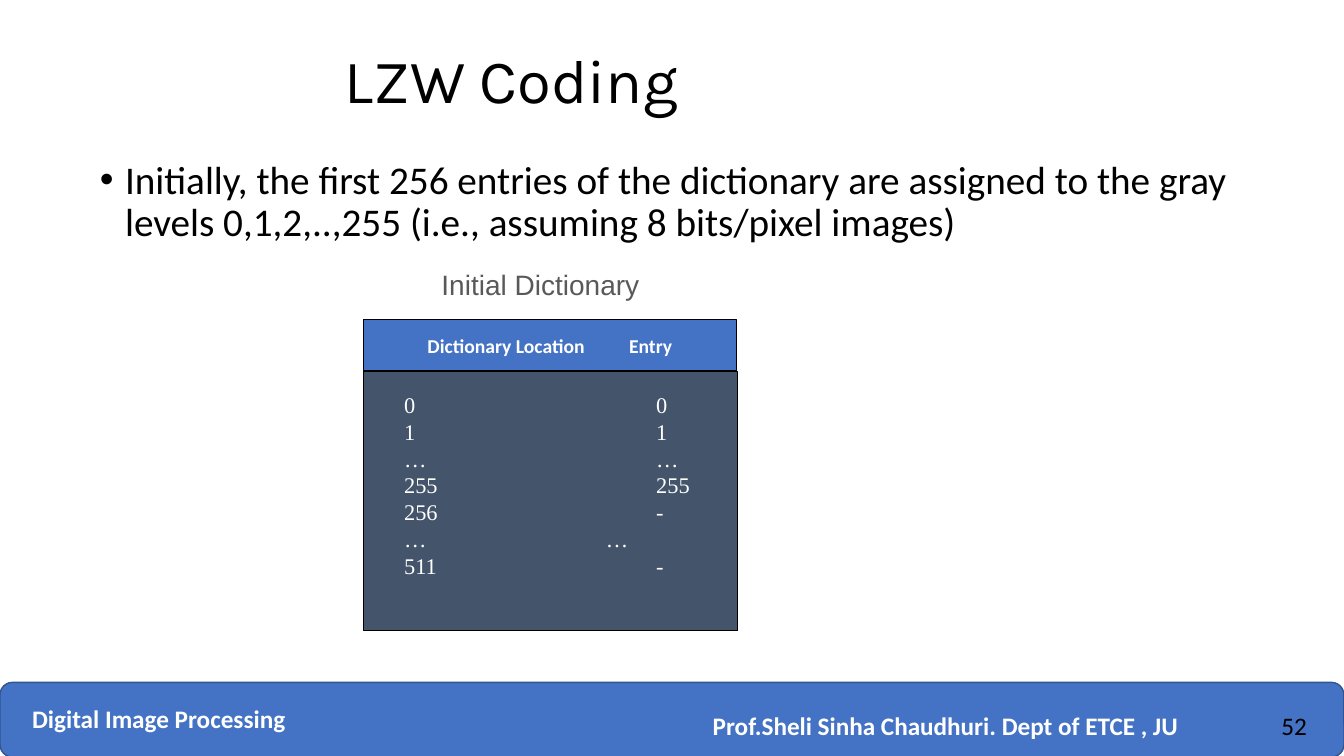
from lxml import etree
from pptx import Presentation
from pptx import util as u
from pptx.dml.color import RGBColor
from pptx.enum import shapes, text
from pptx.oxml import ns

PX = 9144  # 100 px to the inch
BLUE, SLATE, WHITE, BLACK, GRAY = "4472C4", "44546A", "FFFFFF", "000000", "595959"
ROWS = [("0", "0"), ("1", "1"), ("…", "…"), ("255", "255"),
        ("256", "-"), ("…", "…"), ("511", "-")]
ENTRY_TAB, SHORT_TAB, SHORT_ROW = 250, 200, 5


def px(length):
    return u.Emu(length * PX)


def color(target, value):
    target.rgb = RGBColor.from_string(value)


def place(shape, left, top, width, height):
    shape.left, shape.top = px(left), px(top)
    shape.width, shape.height = px(width), px(height)


def style(para, size, font, value, bold=False):
    for span in para.runs:
        span.font.size = u.Pt(size)
        span.font.name = font
        span.font.bold = bold
        color(span.font.color, value)


def add_tab(para, position):
    tabs = etree.SubElement(para._p.get_or_add_pPr(), ns.qn("a:tabLst"))
    etree.SubElement(tabs, ns.qn("a:tab"), pos=str(px(position)), algn="l")


def add_panel(page, kind, box, fill, line, weight):
    panel = page.shapes.add_shape(kind, *map(px, box))
    panel.shadow.inherit = False
    panel.fill.solid()
    color(panel.fill.fore_color, fill)
    color(panel.line.color, line)
    panel.line.width = u.Pt(weight)
    return panel


def add_label(page, box, words, size, font, value, bold=False):
    label = page.shapes.add_textbox(*map(px, box))
    label.text_frame.word_wrap = False
    label.text_frame.text = words
    style(label.text_frame.paragraphs[0], size, font, value, bold)


def add_footer(page, left, top, width, height):
    add_panel(page, shapes.MSO_SHAPE.ROUNDED_RECTANGLE,
              (left, top, width, height), BLUE, "325491", 1)
    for x, y, label_width, words, value, bold in [
            (22, 16, 273, "Digital Image Processing", WHITE, True),
            (697, 23, 492, "Prof.Sheli Sinha Chaudhuri. Dept of ETCE , JU", WHITE, True),
            (1261, 23, 50, "52", BLACK, False)]:
        add_label(page, (left + x, top + y, label_width, 40),
                  words, 18, "Calibri", value, bold)


def fill_title(page, *box):
    title = page.shapes.title
    place(title, *box)
    frame = title.text_frame
    frame.text = "LZW Coding"
    frame.auto_size = text.MSO_AUTO_SIZE.NONE
    frame.vertical_anchor = text.MSO_ANCHOR.MIDDLE
    para = frame.paragraphs[0]
    para.alignment = text.PP_ALIGN.LEFT
    para.line_spacing = 0.9
    style(para, 44, "Karla", BLACK)


def fill_body(page, *box):
    body = page.placeholders[1]
    place(body, *box)
    frame = body.text_frame
    frame.text = ("Initially, the first 256 entries of the dictionary are assigned "
                  "to the gray levels 0,1,2,..,255 (i.e., assuming 8 bits/pixel images)")
    frame.auto_size = text.MSO_AUTO_SIZE.NONE
    para = frame.paragraphs[0]
    para.line_spacing = 0.9
    para.space_before = u.Pt(0)
    props = para._p.get_or_add_pPr()
    props.set("marL", str(px(25)))
    props.set("indent", str(-px(25)))
    etree.SubElement(props, ns.qn("a:buFont"), typeface="Arial")
    etree.SubElement(props, ns.qn("a:buChar"), char="•")
    style(para, 28, "Calibri", BLACK)


def add_dictionary(page, left, top, width, height):
    # Caption above the panels
    add_label(page, (left + 67, top - 57, 218, 44),
              "Initial Dictionary", 20, "Arial", GRAY)

    # Column headings
    header = add_panel(page, shapes.MSO_SHAPE.RECTANGLE,
                       (left, top, width, 51), BLUE, BLACK, 0.75)
    frame = header.text_frame
    frame.margin_left = px(63)
    frame.vertical_anchor = text.MSO_ANCHOR.MIDDLE
    frame.text = "Dictionary Location\tEntry"
    para = frame.paragraphs[0]
    para.alignment = text.PP_ALIGN.LEFT
    add_tab(para, 200)
    style(para, 14, "Calibri", WHITE, True)

    # Locations and their entries
    add_panel(page, shapes.MSO_SHAPE.RECTANGLE,
              (left, top + 52, width + 1, height - 52), SLATE, BLACK, 0.75)
    listing = page.shapes.add_textbox(
        *map(px, (left + 30, top + 66, width - 19, height - 34)))
    frame = listing.text_frame
    frame.word_wrap = True
    frame.text = "\n".join("\t".join(row) for row in ROWS)
    for index, para in enumerate(frame.paragraphs):
        add_tab(para, SHORT_TAB if index == SHORT_ROW else ENTRY_TAB)
        style(para, 16, "Times New Roman", WHITE)


def main():
    deck = Presentation()
    deck.slide_width, deck.slide_height = px(1333), px(750)
    page = deck.slides.add_slide(deck.slide_layouts[1])
    add_footer(page, 0, 677, 1333, 74)
    fill_title(page, 332, 40, 573, 86)
    fill_body(page, 89, 154, 1150, 476)
    add_dictionary(page, 361, 317, 370, 309)
    deck.save("out.pptx")


if __name__ == "__main__":
    main()
